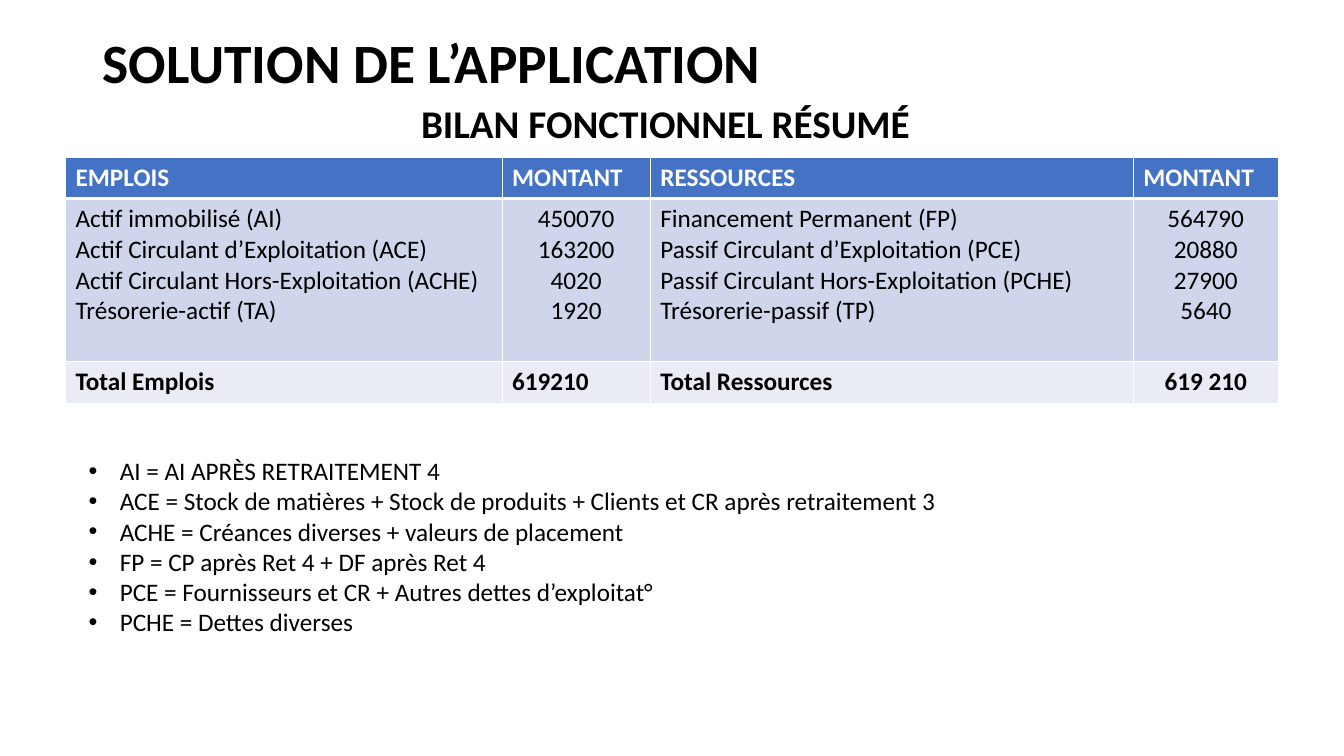
from pptx import Presentation
from pptx.dml.color import RGBColor
from pptx.enum.text import MSO_ANCHOR as Anchor, MSO_AUTO_SIZE as Auto, PP_ALIGN as Align
from pptx.oxml import parse_xml
from pptx.oxml.ns import nsdecls
from pptx.util import Inches, Pt

BLACK = RGBColor(0x00, 0x00, 0x00)
WHITE = RGBColor(0xFF, 0xFF, 0xFF)
BLUE = RGBColor(0x44, 0x72, 0xC4)
BAND = RGBColor(0xCF, 0xD5, 0xEA)
PALE = RGBColor(0xE9, 0xEB, 0xF5)


def write(frame, lines, size, bold=False, color=BLACK, align=Align.LEFT, gap=1.0):
    """Fill a text frame, one paragraph per line."""
    font = {"name": "Calibri", "size": Pt(size), "bold": bold}
    for i, line in enumerate(lines):
        para = frame.paragraphs[0] if i == 0 else frame.add_paragraph()
        para.alignment = align
        para.line_spacing = gap
        run = para.add_run()
        run.text = line
        for key, value in font.items():
            setattr(run.font, key, value)
        run.font.color.rgb = color


def add_box(left, top, width, height, **form):
    """Add a wrapping text box and return its frame."""
    box = slide.shapes.add_textbox(Inches(left), Inches(top), Inches(width), Inches(height))
    form = {"word_wrap": True, "auto_size": Auto.NONE, **form}
    for key, value in form.items():
        setattr(box.text_frame, key, value)
    return box.text_frame


deck = Presentation()
deck.slide_width, deck.slide_height = Inches(13.33), Inches(7.5)
slide = deck.slides.add_slide(deck.slide_layouts[6])

# Headings
title = add_box(0.92, 0.4, 11.5, 0.5, vertical_anchor=Anchor.MIDDLE)
write(title, ["SOLUTION DE L’APPLICATION"], 39.6, bold=True, gap=0.9)
sub = add_box(0.78, 0.99, 11.64, 5.77)
write(sub, ["BILAN FONCTIONNEL RÉSUMÉ"], 28, bold=True, align=Align.CENTER, gap=0.9)

# Balance sheet: each cell is a list of lines
rows = [
    [["EMPLOIS"], ["MONTANT"], ["RESSOURCES"], ["MONTANT"]],
    [
        ["Actif immobilisé (AI)", "Actif Circulant d’Exploitation (ACE)",
         "Actif Circulant Hors-Exploitation (ACHE)", "Trésorerie-actif (TA)"],
        ["450070", "163200", "4020", "1920"],
        ["Financement Permanent (FP)", "Passif Circulant d’Exploitation (PCE)",
         "Passif Circulant Hors-Exploitation (PCHE)", "Trésorerie-passif (TP)"],
        ["564790", "20880", "27900", "5640"],
    ],
    [["Total Emplois"], ["619210"], ["Total Ressources"], ["619 210"]],
]
widths = [4.33, 1.47, 4.79, 1.44]
heights = [0.41, 1.62, 0.41]
fills = [BLUE, BAND, PALE]
middle = {(1, 1), (1, 3), (2, 3)}

grid = slide.shapes.add_table(
    len(rows), len(widths), Inches(0.65), Inches(1.56),
    Inches(sum(widths)), Inches(sum(heights))).table
for col, width in zip(grid.columns, widths):
    col.width = Inches(width)

for r, row in enumerate(rows):
    grid.rows[r].height = Inches(heights[r])
    for c, lines in enumerate(row):
        cell = grid.cell(r, c)
        # White borders, thicker under the header
        for side in "LRTB":
            thick = (r, side) in {(0, "B"), (1, "T")}
            cell._tc.get_or_add_tcPr().append(parse_xml(
                f'<a:ln{side} {nsdecls("a")} w="{Pt(3 if thick else 1)}">'
                f'<a:solidFill><a:srgbClr val="{WHITE}"/></a:solidFill></a:ln{side}>'))
        cell.fill.solid()
        cell.fill.fore_color.rgb = fills[r]
        write(cell.text_frame, lines, 18, bold=r != 1,
              color=WHITE if r == 0 else BLACK,
              align=Align.CENTER if (r, c) in middle else Align.LEFT)

# Bulleted notes
notes = add_box(0.78, 4.47, 11.77, 2.22, auto_size=Auto.SHAPE_TO_FIT_TEXT)
write(notes, [
    "AI = AI APRÈS RETRAITEMENT 4",
    "ACE = Stock de matières + Stock de produits + Clients et CR après retraitement 3",
    "ACHE = Créances diverses + valeurs de placement",
    "FP = CP après Ret 4 + DF après Ret 4",
    "PCE = Fournisseurs et CR + Autres dettes d’exploitat°",
    "PCHE = Dettes diverses",
], 18)
for para in notes.paragraphs:
    props = para._p.get_or_add_pPr()
    props.set("marL", str(Inches(0.31)))
    props.set("indent", str(-Inches(0.31)))
    props.append(parse_xml(f'<a:buFont {nsdecls("a")} typeface="Arial"/>'))
    props.append(parse_xml(f'<a:buChar {nsdecls("a")} char="•"/>'))

deck.save("out.pptx")
